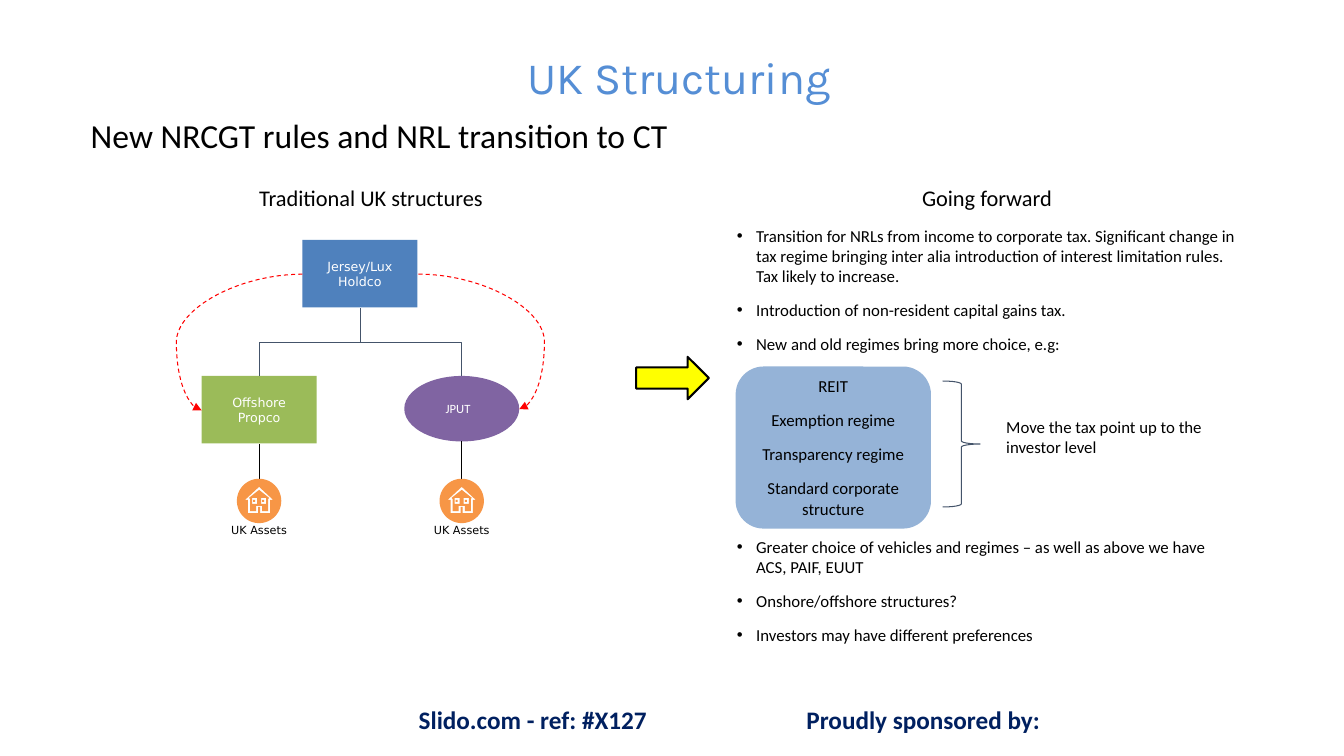
from dataclasses import dataclass
from math import cos, pi, sin

from lxml.etree import SubElement
from pptx import Presentation
from pptx.dml.color import RGBColor
from pptx.enum.dml import MSO_LINE
from pptx.enum.shapes import MSO_CONNECTOR as Link, MSO_SHAPE as Preset
from pptx.enum.text import MSO_ANCHOR as Anchor, MSO_AUTO_SIZE as AutoSize, PP_ALIGN as Align
from pptx.oxml.ns import qn
from pptx.util import Inches, Pt


@dataclass(frozen=True)
class Theme:
    body_font: str = "Calibri"
    title_font: str = "Karla"
    diagram_font: str = "DejaVu Sans"
    title: str = "558ED5"
    footer: str = "002060"
    black: str = "000000"
    white: str = "FFFFFF"
    holdco: str = "4F81BD"
    propco: str = "9BBB59"
    trust: str = "8064A2"
    asset: str = "F79646"
    regimes: str = "95B3D7"
    arrow: str = "FFFF00"
    branch: str = "44546A"
    flow: str = "FF0000"
    title_size: float = 32
    subtitle_size: float = 24
    footer_size: float = 18
    heading_size: float = 16
    text_size: float = 12
    box_size: float = 9
    caption_size: float = 8
    thin: float = 0.75


THEME = Theme()


@dataclass(frozen=True)
class Line:
    text: str
    size: float = THEME.text_size
    color: str = THEME.black
    font: str = THEME.body_font
    bold: bool = False
    align: Align = Align.LEFT
    after: float = 10
    bullet: bool = False


@dataclass(frozen=True)
class Node:
    preset: Preset
    box: tuple[float, float, float, float]
    fill: str | None = None
    outline: str | None = None
    weight: float = 0.75


def rgb(value: str) -> RGBColor:
    return RGBColor.from_string(value)


def place(shape, box) -> None:
    shape.left, shape.top, shape.width, shape.height = map(Inches, box)


def write(frame, lines: list[Line], inset=(0, 0), anchor=Anchor.TOP) -> None:
    frame.word_wrap = True
    frame.auto_size = AutoSize.NONE
    frame.vertical_anchor = anchor
    frame.margin_left = frame.margin_right = Inches(inset[0])
    frame.margin_top = frame.margin_bottom = Inches(inset[1])
    for index, line in enumerate(lines):
        paragraph = frame.paragraphs[0] if index == 0 else frame.add_paragraph()
        paragraph.alignment = line.align
        paragraph.space_before = Pt(0)
        paragraph.space_after = Pt(line.after)
        properties = paragraph._p.get_or_add_pPr()
        indent = Inches(0.19) if line.bullet else 0
        properties.set("marL", str(indent))
        properties.set("indent", str(-indent))
        if line.bullet:
            SubElement(properties, qn("a:buFont"), typeface="Arial")
            SubElement(properties, qn("a:buChar"), char="•")
        else:
            SubElement(properties, qn("a:buNone"))
        run = paragraph.add_run()
        run.text = line.text
        run.font.name, run.font.size, run.font.bold = line.font, Pt(line.size), line.bold
        run.font.color.rgb = rgb(line.color)


def add_text(slide, box, lines: list[Line], inset=(0, 0)) -> None:
    write(slide.shapes.add_textbox(*map(Inches, box)).text_frame, lines, inset)


def add_node(slide, node: Node):
    shape = slide.shapes.add_shape(node.preset, *map(Inches, node.box))
    shape.shadow.inherit = False
    if node.fill:
        shape.fill.solid()
        shape.fill.fore_color.rgb = rgb(node.fill)
    else:
        shape.fill.background()
    if node.outline:
        shape.line.color.rgb = rgb(node.outline)
        shape.line.width = Pt(node.weight)
    else:
        shape.line.fill.background()
    return shape


def add_link(slide, kind: Link, start, end, color: str):
    connector = slide.shapes.add_connector(kind, *map(Inches, (*start, *end)))
    connector.line.color.rgb = rgb(color)
    connector.line.width = Pt(THEME.thin)
    SubElement(connector._element.spPr, qn("a:effectLst"))
    return connector


def add_branch(slide, start, end) -> None:
    """Elbow that leaves downwards: a level elbow turned by a quarter."""
    drop, spread = end[1] - start[1], abs(end[0] - start[0])
    middle_x, middle_y = (start[0] + end[0]) / 2, (start[1] + end[1]) / 2
    left, right = middle_x - drop / 2, middle_x + drop / 2
    top, bottom = middle_y - spread / 2, middle_y + spread / 2
    rightward = end[0] > start[0]
    if rightward:
        left, right = right, left
    connector = add_link(slide, Link.ELBOW, (left, top), (right, bottom), THEME.branch)
    degrees = 270 if rightward else 90
    connector._element.spPr.find(qn("a:xfrm")).set("rot", str(degrees * 60000))


def add_flow(slide, start, end) -> None:
    """Dashed curve that swings out past its end."""
    connector = add_link(slide, Link.CURVE, start, end, THEME.flow)
    connector.line.dash_style = MSO_LINE.DASH
    properties = connector._element.spPr
    SubElement(properties.find(qn("a:ln")), qn("a:tailEnd"), type="triangle")
    geometry = properties.find(qn("a:prstGeom"))
    adjustments = geometry.find(qn("a:avLst"))
    if adjustments is None:
        adjustments = SubElement(geometry, qn("a:avLst"))
    SubElement(adjustments, qn("a:gd"), name="adj1", fmla="val 125000")


def mirrored(half):
    return half + [(-x, y) for x, y in reversed(half)]


def rectangle(left, top, right, bottom):
    return [(left, top), (right, top), (right, bottom), (left, bottom)]


def add_house(slide, center_x: float, center_y: float) -> None:
    """Disc with a house cut out of it."""
    disc = [(0.22 * cos(step * pi / 36), 0.22 * sin(step * pi / 36)) for step in range(72)]
    outer = mirrored([(0, -0.14), (0.14, -0.01), (0.11, -0.01), (0.11, 0.12), (0.01, 0.12), (0.01, 0.06)])
    inner = mirrored([(0, -0.11), (0.1, -0.03), (0.09, -0.02), (0.09, 0.1), (0.03, 0.1), (0.03, 0.05)])
    windows = [rectangle(-0.07, -0.03, -0.02, 0.03), rectangle(-0.06, -0.01, -0.04, 0.01),
               rectangle(0.02, -0.03, 0.07, 0.03), rectangle(0.03, -0.01, 0.05, 0.01)]
    builder = None
    for contour in [disc, outer, inner, *windows]:
        points = [(Inches(center_x + x), Inches(center_y + y)) for x, y in contour]
        if builder is None:
            builder = slide.shapes.build_freeform(*points[0])
        else:
            builder.move_to(*points[0])
        builder.add_line_segments(points[1:], close=True)
    house = builder.convert_to_shape()
    house.shadow.inherit = False
    house.fill.solid()
    house.fill.fore_color.rgb = rgb(THEME.asset)
    house.line.fill.background()


def add_structure(slide) -> None:
    holdco_x, propco_x, trust_x = 3.58, 2.57, 4.58
    width, height, top = 1.14, 0.67, 3.73
    boxes = [("Jersey/Lux Holdco", 3, 2.38, THEME.holdco), ("Offshore Propco", 2, top, THEME.propco)]
    for label, left, box_top, fill in boxes:
        shape = add_node(slide, Node(Preset.RECTANGLE, (left, box_top, width, height), fill))
        write(shape.text_frame,
              [Line(label, THEME.box_size, THEME.white, THEME.diagram_font, align=Align.CENTER, after=0)],
              (0.09, 0.04), Anchor.MIDDLE)
    add_node(slide, Node(Preset.OVAL, (4.01, top, width, 0.65), THEME.trust))
    add_text(slide, (4.42, 3.98, 0.38, 0.15), [Line("JPUT", THEME.box_size, THEME.white)])
    # Assets under each vehicle
    for x, bottom in [(propco_x, 4.4), (trust_x, 4.38)]:
        add_link(slide, Link.STRAIGHT, (x, 4.75), (x, bottom), THEME.black)
        add_house(slide, x, 4.97)
        add_text(slide, (x - 0.51, 5.19, 1.02, 0.13),
                 [Line("UK Assets", THEME.caption_size, font=THEME.diagram_font, align=Align.CENTER, after=0)])
        add_branch(slide, (holdco_x, 3.06), (x, top))
    add_flow(slide, (3, 2.72), (2, 4.07))
    add_flow(slide, (4.15, 2.72), (5.15, 4.06))


def add_outlook(slide) -> None:
    changes = ["Transition for NRLs from income to corporate tax. Significant change in tax regime bringing "
               "inter alia introduction of interest limitation rules. Tax likely to increase.",
               "Introduction of non-resident capital gains tax.",
               "New and old regimes bring more choice, e.g:"]
    choices = ["Greater choice of vehicles and regimes – as well as above we have ACS, PAIF, EUUT",
               "Onshore/offshore structures?", "Investors may have different preferences"]
    regimes = ["REIT", "Exemption regime", "Transparency regime", "Standard corporate structure"]
    heading = Line("Going forward", THEME.heading_size, align=Align.CENTER)
    add_text(slide, (7.31, 1.83, 4.96, 2.01), [heading, *(Line(text, bullet=True) for text in changes)])
    add_text(slide, (7.31, 5.32, 4.96, 1.4), [Line(text, bullet=True) for text in choices])
    add_node(slide, Node(Preset.RIGHT_ARROW, (6.31, 3.54, 0.72, 0.42), THEME.arrow, THEME.black, 1.5))
    panel = add_node(slide, Node(Preset.ROUNDED_RECTANGLE, (7.31, 3.65, 1.91, 1.58),
                                 THEME.regimes, THEME.regimes, 2))
    write(panel.text_frame, [Line(text, align=Align.CENTER) for text in regimes])
    add_node(slide, Node(Preset.RIGHT_BRACE, (9.35, 3.78, 0.37, 1.25), outline=THEME.branch))
    add_text(slide, (9.98, 4.13, 1.97, 0.4), [Line("Move the tax point up to the investor level")])


def main() -> None:
    presentation = Presentation()
    presentation.slide_width, presentation.slide_height = Inches(13.33), Inches(7.5)
    slide = presentation.slides.add_slide(presentation.slide_layouts[1])
    # Title and subtitle
    title, body = slide.shapes.title, slide.placeholders[1]
    place(title, (0.8, 0.25, 11.87, 1.01))
    write(title.text_frame, [Line("UK Structuring", THEME.title_size, THEME.title, THEME.title_font,
                                  align=Align.CENTER, after=0)], (0.1, 0.05), Anchor.MIDDLE)
    place(body, (0.8, 1.09, 11.87, 5.36))
    write(body.text_frame, [Line("New NRCGT rules and NRL transition to CT", THEME.subtitle_size)], (0.1, 0.05))
    # Left and right halves
    add_text(slide, (2.57, 1.83, 2.32, 0.27), [Line("Traditional UK structures", THEME.heading_size)])
    add_structure(slide)
    add_outlook(slide)
    # Footer
    for text, box, align in [("Slido.com - ref: #X127", (3.18, 6.94, 4.21, 0.4), Align.CENTER),
                             ("Proudly sponsored by:", (7.9, 6.94, 2.62, 0.4), Align.LEFT)]:
        add_text(slide, box, [Line(text, THEME.footer_size, THEME.footer, bold=True, align=align, after=0)],
                 (0.1, 0.05))
    presentation.save("out.pptx")


if __name__ == "__main__":
    main()
